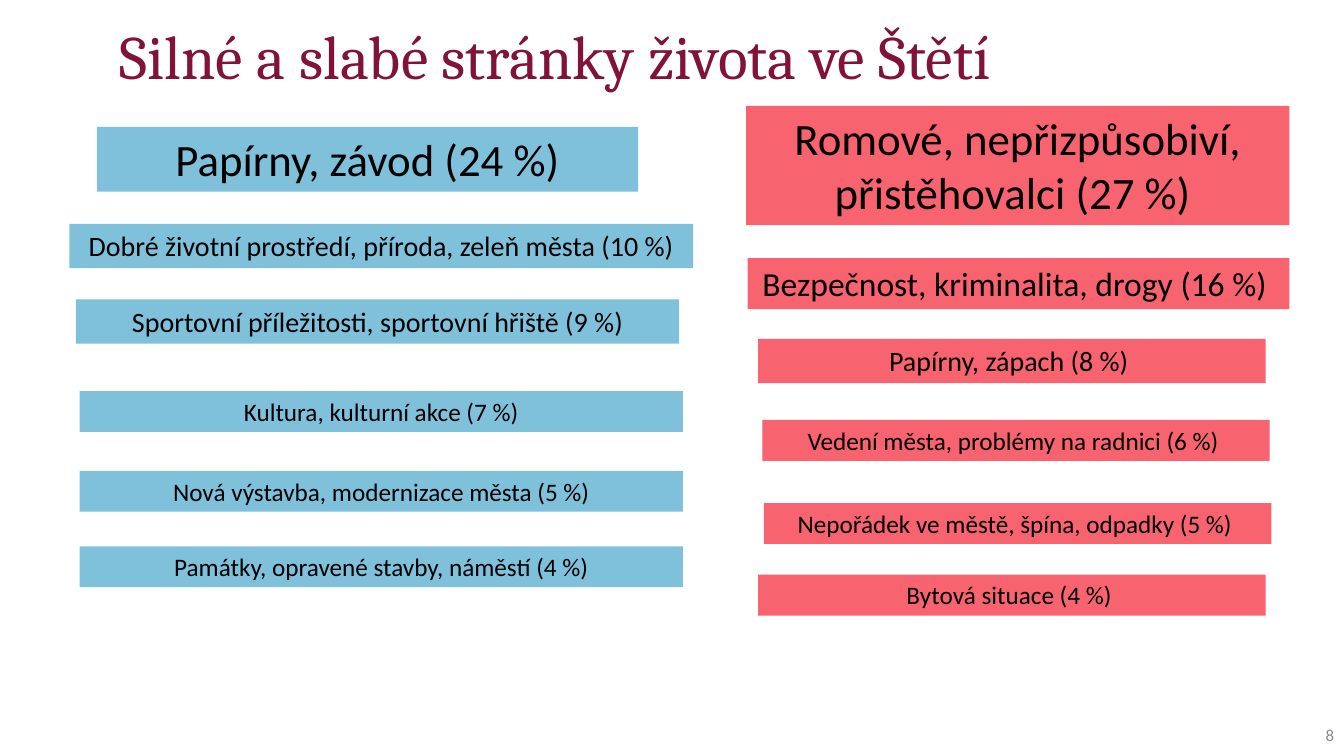
from dataclasses import dataclass

from pptx import Presentation
from pptx.dml.color import RGBColor
from pptx.enum.shapes import MSO_SHAPE as Shape
from pptx.enum.text import MSO_ANCHOR as Anchor, MSO_AUTO_SIZE as AutoSize, PP_ALIGN as Align
from pptx.slide import Slide
from pptx.text.text import TextFrame
from pptx.util import Pt

STRENGTH_BLUE = "7FC1DB"
WEAKNESS_RED = "F7636E"
LINE_HEIGHT = 1.22
VERTICAL_INSETS = 7.2


@dataclass
class Answer:
    text: str
    left: float
    top: float
    width: float
    size: int
    lines: int = 1

    @property
    def height(self) -> float:
        return self.size * LINE_HEIGHT * self.lines + VERTICAL_INSETS


STRENGTHS = [
    Answer("Papírny, závod (24 %)", 69.1, 90.7, 386.8, 32),
    Answer("Dobré životní prostředí, příroda, zeleň města (10 %)", 49.5, 160, 445.6, 20),
    Answer("Sportovní příležitosti, sportovní hřiště (9 %)", 54.2, 213.8, 431, 20),
    Answer("Kultura, kulturní akce (7 %)", 56.8, 279.3, 431, 18),
    Answer("Nová výstavba, modernizace města (5 %)", 56.8, 336.4, 431, 18),
    Answer("Památky, opravené stavby, náměstí (4 %)", 56.8, 390.2, 431, 18),
]

WEAKNESSES = [
    Answer("Romové, nepřizpůsobiví, přistěhovalci (27 %) ", 533, 75.6, 388, 32, lines=2),
    Answer("Bezpečnost, kriminalita, drogy (16 %) ", 534, 184.3, 387, 24),
    Answer("Papírny, zápach (8 %) ", 541.6, 242, 362.4, 20),
    Answer("Vedení města, problémy na radnici (6 %) ", 544.5, 300, 362.4, 18),
    Answer("Nepořádek ve městě, špína, odpadky (5 %) ", 545.7, 359.3, 362.4, 18),
    Answer("Bytová situace (4 %) ", 541.6, 410.5, 362.4, 18),
]


def color(value: str) -> RGBColor:
    return RGBColor.from_string(value)


def write(frame: TextFrame, text: str, size: int, font_name: str,
          font_color: str, align: Align) -> None:
    frame.word_wrap = True
    frame.text = text
    paragraph = frame.paragraphs[0]
    paragraph.alignment = align
    font = paragraph.runs[0].font
    font.size = Pt(size)
    font.name = font_name
    font.color.rgb = color(font_color)


def add_title(slide: Slide, text: str) -> None:
    box = slide.shapes.add_textbox(Pt(85.7), Pt(18.7), Pt(818), Pt(77))
    frame = box.text_frame
    frame.margin_left = frame.margin_right = frame.margin_top = frame.margin_bottom = 0
    write(frame, text, 44, "Cambria", "811339", Align.LEFT)
    frame.paragraphs[0].line_spacing = 0.9


def add_page_number(slide: Slide, number: str) -> None:
    box = slide.shapes.add_textbox(Pt(918), Pt(510.5), Pt(42), Pt(28.8))
    box.text_frame.vertical_anchor = Anchor.MIDDLE
    write(box.text_frame, number, 12, "Calibri", "8C8C8C", Align.RIGHT)


def add_answer(slide: Slide, answer: Answer, fill: str) -> None:
    shape = slide.shapes.add_shape(Shape.RECTANGLE, Pt(answer.left), Pt(answer.top),
                                   Pt(answer.width), Pt(answer.height))
    shape.shadow.inherit = False
    shape.fill.solid()
    shape.fill.fore_color.rgb = color(fill)
    shape.line.fill.background()
    frame = shape.text_frame
    frame.vertical_anchor = Anchor.TOP
    frame.auto_size = AutoSize.SHAPE_TO_FIT_TEXT
    write(frame, answer.text, answer.size, "Calibri", "000000", Align.CENTER)


def main() -> None:
    presentation = Presentation()
    presentation.slide_width, presentation.slide_height = Pt(960), Pt(540)
    slide = presentation.slides.add_slide(presentation.slide_layouts[6])

    # Title and page number
    add_title(slide, "Silné a slabé stránky života ve Štětí")
    add_page_number(slide, "8")

    # Strengths on the left, weaknesses on the right
    for answers, fill in ((STRENGTHS, STRENGTH_BLUE), (WEAKNESSES, WEAKNESS_RED)):
        for answer in answers:
            add_answer(slide, answer, fill)

    presentation.save("out.pptx")


if __name__ == "__main__":
    main()
